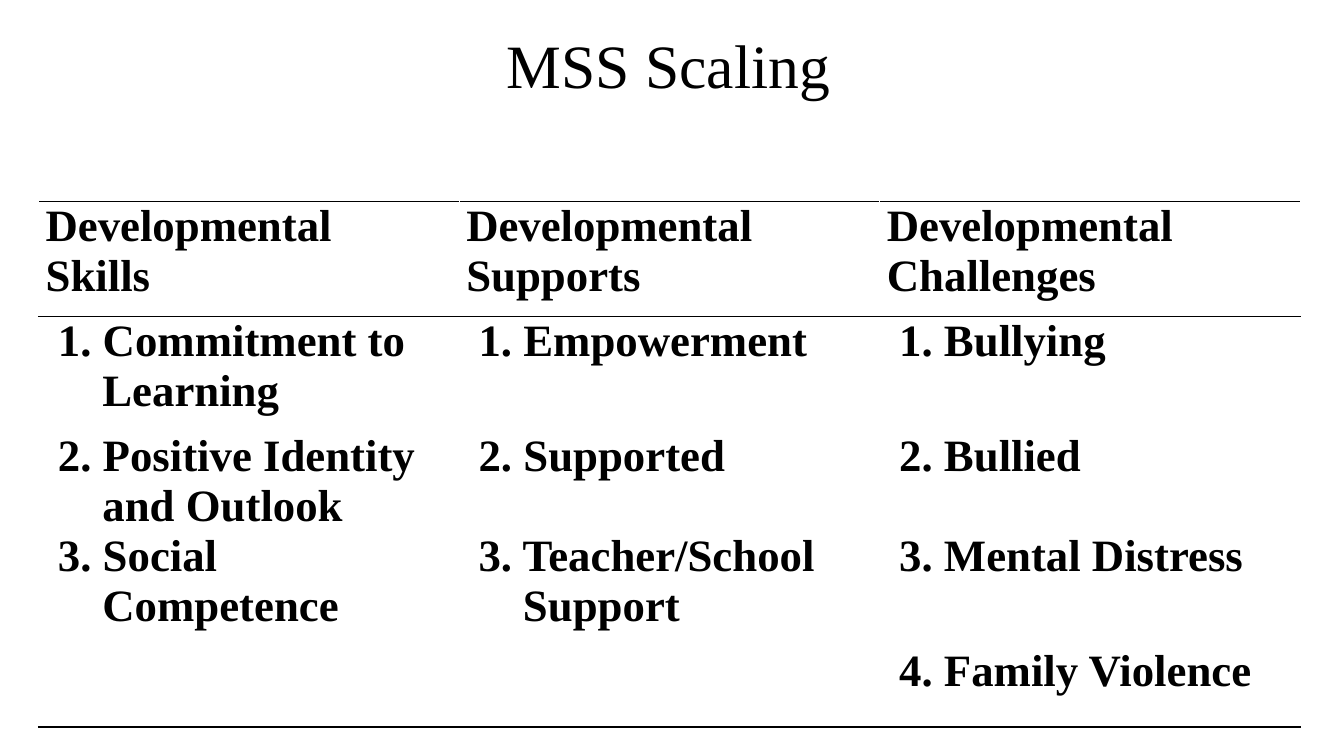
import pptx
import pptx.dml.color
import pptx.enum.text
import pptx.oxml
import pptx.oxml.ns
import pptx.util
from pptx.util import Cm

BLACK = pptx.dml.color.RGBColor(0x00, 0x00, 0x00)
WHITE = pptx.dml.color.RGBColor(0xFF, 0xFF, 0xFF)

HEADERS = [["Developmental", "Skills"], ["Developmental Supports"],
           ["Developmental Challenges"]]
SCALES = [
    ["Commitment to Learning", "Positive Identity and Outlook", "Social Competence"],
    ["Empowerment", "Supported", "Teacher/School Support"],
    ["Bullying", "Bullied", "Mental Distress", "Family Violence"],
]
ROW_HEIGHTS = [2.9, 2.9, 2.03, 2.9, 2.03]
COLUMN_WIDTH = 10.6


class Deck:
    """Hold the slide style and add elements to the current slide."""

    font = "Times New Roman"

    def __init__(self, prs):
        self.s = prs.slides.add_slide(prs.slide_layouts[5])

    def run(self, p, text, size, bold=False):
        """Add one styled run to a paragraph."""
        r = p.add_run()
        r.text = text
        r.font.name = self.font
        r.font.size = pptx.util.Pt(size)
        r.font.bold = bold
        r.font.color.rgb = BLACK

    def title(self, text, left, top, width, height):
        """Place and format the title placeholder."""
        sp = self.s.shapes.title
        sp.left, sp.top, sp.width, sp.height = map(Cm, (left, top, width, height))
        tf = sp.text_frame
        tf.vertical_anchor = pptx.enum.text.MSO_ANCHOR.MIDDLE
        p = tf.paragraphs[0]
        p.alignment = pptx.enum.text.PP_ALIGN.CENTER
        self.run(p, text, 44)

    def border(self, cell, side, color):
        """Draw one side of a cell."""
        cell._tc.get_or_add_tcPr().append(pptx.oxml.parse_xml(
            f'<a:ln{side} {pptx.oxml.ns.nsdecls("a")} w="12700"><a:solidFill>'
            f'<a:srgbClr val="{color}"/></a:solidFill></a:ln{side}>'))

    def cell(self, cell, lines, top, bottom, hanging):
        """Format one cell and fill it with paragraphs."""
        cell.margin_left = cell.margin_right = Cm(0.18)
        cell.margin_top = cell.margin_bottom = Cm(0)
        for side, color in zip("LRTB", (WHITE, WHITE, top, bottom)):
            self.border(cell, side, color)
        cell.fill.background()
        tf = cell.text_frame
        for i, line in enumerate(lines):
            p = tf.add_paragraph() if i else tf.paragraphs[0]
            if hanging:
                pPr = p._p.get_or_add_pPr()
                pPr.set("marL", str(Cm(1.43)))
                pPr.set("indent", str(Cm(-1.12)))
            self.run(p, line, 32, bold=True)

    def table(self, headers, scales, left, top):
        """Add the table of numbered scales under their headers."""
        frame = self.s.shapes.add_table(
            len(ROW_HEIGHTS), len(headers), Cm(left), Cm(top),
            Cm(COLUMN_WIDTH * len(headers)), Cm(sum(ROW_HEIGHTS)))
        table = frame.table
        table.first_row = table.horz_banding = False
        for row, height in zip(table.rows, ROW_HEIGHTS):
            row.height = Cm(height)
        last = len(ROW_HEIGHTS) - 1
        for j, (header, names) in enumerate(zip(headers, scales)):
            table.columns[j].width = Cm(COLUMN_WIDTH)
            self.cell(table.cell(0, j), header, BLACK, BLACK, False)
            for i in range(1, last + 1):
                lines = [f"{i}. {names[i - 1]}"] if i <= len(names) else []
                self.cell(table.cell(i, j), lines, BLACK if i == 1 else WHITE,
                          BLACK if i == last else WHITE, True)


def main():
    """Build and save the slide."""
    prs = pptx.Presentation()
    prs.slide_width, prs.slide_height = Cm(33.87), Cm(19.05)
    deck = Deck(prs)
    deck.title("MSS Scaling", 2.46, 0.03, 28.78, 3.18)
    deck.table(HEADERS, SCALES, 0.97, 5.08)
    prs.save("out.pptx")


if __name__ == "__main__":
    main()
